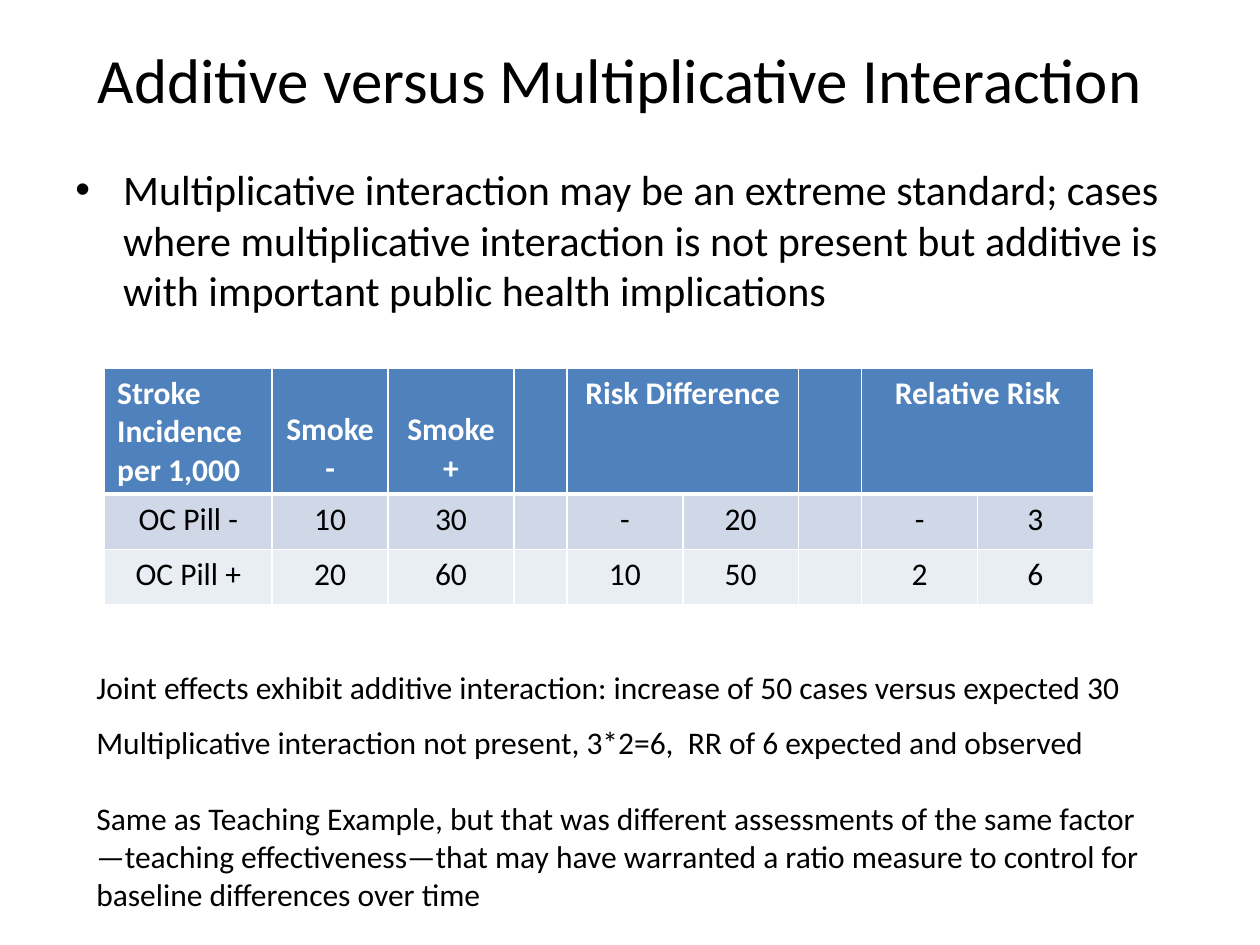
import pptx
import pptx.util
import pptx.dml.color
import pptx.enum.text
import pptx.oxml
import pptx.oxml.ns
from lxml import etree

In, Pt = pptx.util.Inches, pptx.util.Pt
AL, ANCHOR = pptx.enum.text.PP_ALIGN, pptx.enum.text.MSO_ANCHOR
qn = pptx.oxml.ns.qn


def color(value):
    return pptx.dml.color.RGBColor.from_string(value)


def write(tf, lines, size, ink="000000", bold=False, **para):
    """Fill a text frame, one paragraph per line."""
    tf.word_wrap = True
    for i, line in enumerate(lines):
        p = tf.paragraphs[0] if i == 0 else tf.add_paragraph()
        for name, value in para.items():
            setattr(p, name, value)
        r = p.add_run()
        r.text = line
        for name, value in dict(size=Pt(size), name="Calibri", bold=bold).items():
            setattr(r.font, name, value)
        r.font.color.rgb = color(ink)


prs = pptx.Presentation()
W, H = prs.slide_width, prs.slide_height = In(10), In(7.5)
s = prs.slides.add_slide(prs.slide_layouts[5])

# Title
title = s.shapes.title
box = dict(left=In(0.42), top=0, width=int(W * 0.9), height=int(H / 6))
for name, value in box.items():
    setattr(title, name, value)
title.text_frame.vertical_anchor = ANCHOR.MIDDLE
write(title.text_frame, ["Additive versus Multiplicative Interaction"], 36,
      alignment=AL.CENTER)

# Bulleted statement
body = s.shapes.add_textbox(int(W * 0.05), int(H / 6), int(W * 0.9), int(H * 0.66))
write(body.text_frame, [
    "Multiplicative interaction may be an extreme standard; cases where "
    "multiplicative interaction is not present but additive is with important "
    "public health implications"], 24, space_before=Pt(4.8))
pPr = body.text_frame.paragraphs[0]._p.get_or_add_pPr()
pPr.set("marL", str(In(0.38)))
pPr.set("indent", str(-In(0.38)))
etree.SubElement(pPr, qn("a:buFont")).set("typeface", "Arial")
etree.SubElement(pPr, qn("a:buChar")).set("char", "•")

# Table: incidence, risk difference and relative risk
rows = [
    ["Stroke Incidence per 1,000", "Smoke\n-", "Smoke\n+", "",
     "Risk Difference", "", "", "Relative Risk", ""],
    ["OC Pill -", "10", "30", "", "-", "20", "", "-", "3"],
    ["OC Pill +", "20", "60", "", "10", "50", "", "2", "6"],
]
widths = [1.33, 0.92, 1, 0.42, 0.92, 0.92, 0.5, 0.92, 0.92]
heights = [1, 0.44, 0.44]
fills = ["4F81BD", "D0D8E8", "E9EDF4"]

table = s.shapes.add_table(len(rows), len(widths), In(0.83), In(2.92),
                           In(sum(widths)), In(sum(heights))).table
for col, width in zip(table.columns, widths):
    col.width = In(width)
for row, height in zip(table.rows, heights):
    row.height = In(height)

for i, row in enumerate(rows):
    head = i == 0
    for j, text in enumerate(row):
        cell = table.cell(i, j)
        if text:
            write(cell.text_frame, text.split("\n"), 18,
                  "FFFFFF" if head else "000000", head,
                  alignment=AL.LEFT if head and j == 0 else AL.CENTER)
        if "\n" in text:
            cell.vertical_anchor = ANCHOR.BOTTOM
        # White borders, thicker at the header's edge
        tcPr = cell._tc.get_or_add_tcPr()
        thick = {0: "lnB", 1: "lnT"}.get(i)
        for side in ("lnL", "lnR", "lnT", "lnB"):
            ln = etree.SubElement(tcPr, qn("a:" + side))
            ln.set("w", str(Pt(3 if side == thick else 1)))
            fill = etree.SubElement(ln, qn("a:solidFill"))
            etree.SubElement(fill, qn("a:srgbClr")).set("val", "FFFFFF")
        cell.fill.solid()
        cell.fill.fore_color.rgb = color(fills[i])
for j in (4, 7):
    table.cell(0, j).merge(table.cell(0, j + 1))

# Notes under the table
notes = s.shapes.add_textbox(int(W / 15), int(H * 0.7), int(W * 0.85), In(2.05))
tf = notes.text_frame
write(tf, [
    "Joint effects exhibit additive interaction: increase of 50 cases versus expected 30",
    "Multiplicative interaction not present, 3*2=6,  RR of 6 expected and observed",
    "Same as Teaching Example, but that was different assessments of the same "
    "factor—teaching effectiveness—that may have warranted a ratio measure to "
    "control for baseline differences over time"], 18)
for p, gap in zip(tf.paragraphs, (0, 10, 22)):
    p.space_before = Pt(gap)

prs.save("out.pptx")
